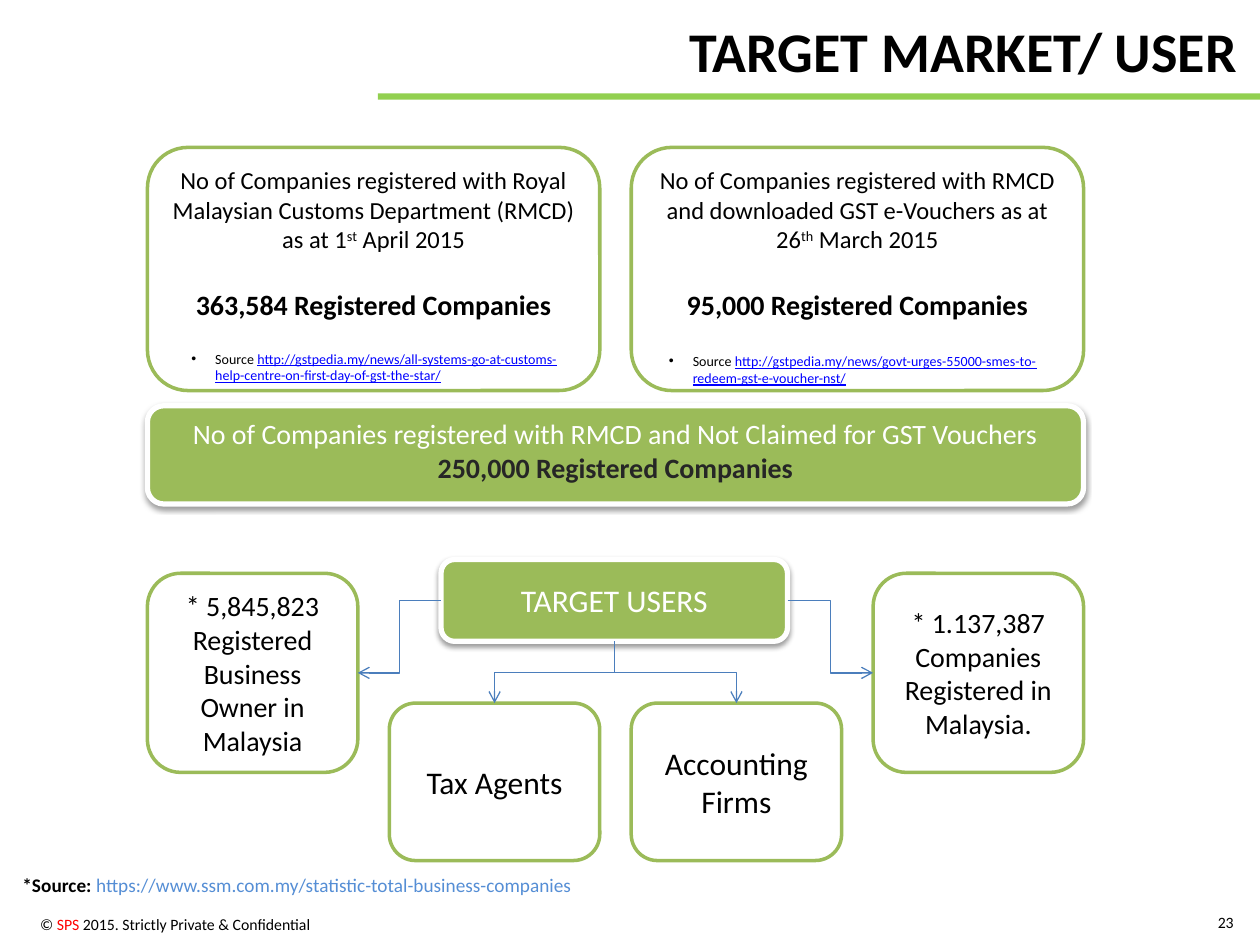
from lxml.etree import SubElement
from pptx import Presentation
from pptx.dml.color import RGBColor
from pptx.enum.shapes import MSO_CONNECTOR, MSO_SHAPE
from pptx.enum.text import MSO_ANCHOR, PP_ALIGN
from pptx.oxml.ns import qn
from pptx.util import Inches, Pt

COLORS = {"black": "000000", "white": "FFFFFF", "green": "9BBB59", "lime": "92D050",
          "red": "FF0000", "link": "0000FF", "sky": "558ED5", "dark": "262626",
          "arrow": "4B7EBC"}

TITLE = "TARGET MARKET/ USER"
COUNTS = [
    {"lead": "No of Companies registered with Royal Malaysian Customs Department (RMCD) as at 1",
     "ordinal": "st", "date": " April 2015", "total": "363,584 Registered Companies",
     "source": "http://gstpedia.my/news/all-systems-go-at-customs-help-centre-on-first-day-of-gst-the-star/",
     "source_at": (1.42, 2.73)},
    {"lead": "No of Companies registered with RMCD and downloaded GST e-Vouchers as at 26",
     "ordinal": "th", "date": " March 2015", "total": "95,000 Registered Companies",
     "source": "http://gstpedia.my/news/govt-urges-55000-smes-to-redeem-gst-e-voucher-nst/",
     "source_at": (5.21, 2.75)},
]
UNCLAIMED = [
    [("No of Companies registered with RMCD and Not Claimed for GST Vouchers", {})],
    [("250,000 Registered Companies", {"color": "dark", "bold": True})],
]
USERS = [
    ("* 5,845,823 Registered Business Owner in Malaysia", 16, 4.55, 1.58),
    ("Tax Agents", 18, 5.58, 1.25),
    ("Accounting Firms", 18, 5.58, 1.25),
    ("* 1.137,387 Companies Registered in Malaysia.", 16, 4.55, 1.58),
]
SOURCE = [[("*Source: ", {"bold": True}),
           ("https://www.ssm.com.my/statistic-total-business-companies", {"color": "sky"})]]
FOOTER = [[("© ", {}), ("SPS ", {"color": "red"}), ("2015. Strictly Private & Confidential", {})]]
PAGE_NUMBER = "23"

LEFT, GAP, USER_WIDTH = 1.17, 0.25, 1.67
COUNT_WIDTH = 2 * USER_WIDTH + GAP
FULL_WIDTH = 2 * COUNT_WIDTH + GAP
HUB = (3.5, 4.44, 2.75, 0.65)


def rgb(name):
    return RGBColor.from_string(COLORS[name])


def write(shape, text, size=16, color="black", bold=False, align=PP_ALIGN.LEFT,
          anchor=MSO_ANCHOR.TOP, gap=0, bullet=False):
    """Write a string, or a list of paragraphs of (string, format) spans, into a shape."""
    frame = shape.text_frame
    frame.word_wrap = True
    frame.vertical_anchor = anchor
    paragraphs = [[(text, {})]] if isinstance(text, str) else text
    for index, spans in enumerate(paragraphs):
        para = frame.add_paragraph() if index else frame.paragraphs[0]
        para.alignment = align
        para.space_before = Pt(gap if index else 0)
        if bullet:
            properties = para._p.get_or_add_pPr()
            properties.set("marL", str(Inches(0.19)))
            properties.set("indent", str(Inches(-0.19)))
            SubElement(properties, qn("a:buFont")).set("typeface", "Arial")
            SubElement(properties, qn("a:buChar")).set("char", "•")
        for words, style in spans:
            span = para.add_run()
            span.text = words
            font = span.font
            font.name = "Calibri"
            font.size = Pt(style.get("size", size))
            font.bold = style.get("bold", bold)
            font.color.rgb = rgb(style.get("color", color))
            if style.get("underline"):
                font.underline = True
            if style.get("raised"):
                font._element.set("baseline", "30000")


def add_text(page, place, text, **style):
    box = page.shapes.add_textbox(*map(Inches, place))
    write(box, text, **style)


def add_box(page, place, kind=MSO_SHAPE.ROUNDED_RECTANGLE, fill="white", line="green", width=2):
    box = page.shapes.add_shape(kind, *map(Inches, place))
    box.shadow.inherit = False
    box.fill.solid()
    box.fill.fore_color.rgb = rgb(fill)
    if line:
        box.line.color.rgb = rgb(line)
        box.line.width = Pt(width)
    else:
        box.line.fill.background()
    return box


def add_raised_box(page, place):
    box = add_box(page, place, fill="green", line="white", width=3)
    effects = box._element.spPr.find(qn("a:effectLst"))
    shadow = SubElement(effects, qn("a:outerShdw"), blurRad=str(Pt(3.1)), dist=str(Pt(1.6)),
                        dir="5400000", rotWithShape="0")
    color = SubElement(shadow, qn("a:srgbClr"), val=COLORS["black"])
    SubElement(color, qn("a:alpha"), val="38000")
    return box


def add_arrow(page, start, end, downward=False):
    (x1, y1), (x2, y2) = start, end
    turn = 0
    if downward:
        middle_x, middle_y = (x1 + x2) / 2, (y1 + y2) / 2
        half_width, half_height = (y2 - y1) / 2, abs(x2 - x1) / 2
        side = 1 if x2 < x1 else -1
        turn = 90 if side == 1 else 270
        x1, x2 = middle_x - side * half_width, middle_x + side * half_width
        y1, y2 = middle_y - half_height, middle_y + half_height
    arrow = page.shapes.add_connector(MSO_CONNECTOR.ELBOW, *map(Inches, (x1, y1, x2, y2)))
    arrow.line.color.rgb = rgb("arrow")
    arrow.line.width = Pt(0.75)
    properties = arrow._element.spPr
    if turn:
        properties.find(qn("a:xfrm")).set("rot", str(turn * 60000))
    SubElement(properties.find(qn("a:ln")), qn("a:tailEnd"), type="arrow")
    SubElement(properties, qn("a:effectLst"))


def main():
    deck = Presentation()
    deck.slide_width, deck.slide_height = Inches(10), Inches(7.5)
    page = deck.slides.add_slide(deck.slide_layouts[5])
    centred = {"align": PP_ALIGN.CENTER, "anchor": MSO_ANCHOR.MIDDLE}

    add_box(page, (3, 0.74, 7, 0.05), kind=MSO_SHAPE.RECTANGLE, fill="lime", line=None)
    title = page.shapes.title
    title.left, title.top, title.width, title.height = map(Inches, (4.75, 0.08, 5.17, 0.64))
    write(title, TITLE, size=32, bold=True, align=PP_ALIGN.RIGHT)

    for index, count in enumerate(COUNTS):
        left = LEFT + index * (COUNT_WIDTH + GAP)
        text = [[(count["lead"], {}), (count["ordinal"], {"raised": True}), (count["date"], {})],
                [(count["total"], {"size": 16, "bold": True})]]
        write(add_box(page, (left, 1.17, COUNT_WIDTH, 1.93)), text, size=14,
              align=PP_ALIGN.CENTER, gap=19.5)

    write(add_raised_box(page, (LEFT, 3.22, FULL_WIDTH, 0.78)), UNCLAIMED, color="white",
          align=PP_ALIGN.CENTER)
    write(add_raised_box(page, HUB), "TARGET USERS", size=18, color="white", **centred)

    hub_left, hub_top, hub_width, hub_height = HUB
    hub_middle = hub_top + hub_height / 2
    hub_bottom = (hub_left + hub_width / 2, hub_top + hub_height)
    for index, (text, size, top, height) in enumerate(USERS):
        left = LEFT + index * (USER_WIDTH + GAP)
        write(add_box(page, (left, top, USER_WIDTH, height)), text, size=size, **centred)
        if index == 0:
            add_arrow(page, (hub_left, hub_middle), (left + USER_WIDTH, top + height / 2))
        elif index == len(USERS) - 1:
            add_arrow(page, (hub_left + hub_width, hub_middle), (left, top + height / 2))
        else:
            add_arrow(page, hub_bottom, (left + USER_WIDTH / 2, top), downward=True)

    for count in COUNTS:
        text = [[("Source ", {}), (count["source"], {"color": "link", "underline": True})]]
        add_text(page, (*count["source_at"], 3.17, 0.5), text, size=8, bullet=True)

    add_text(page, (0.08, 6.88, 5, 0.29), SOURCE, size=11)
    add_text(page, (0.22, 7.21, 2.5, 0.25), FOOTER, size=9)
    add_text(page, (9.49, 7.12, 0.4, 0.4), PAGE_NUMBER, size=9, align=PP_ALIGN.RIGHT,
             anchor=MSO_ANCHOR.MIDDLE)
    deck.save("out.pptx")


if __name__ == "__main__":
    main()
